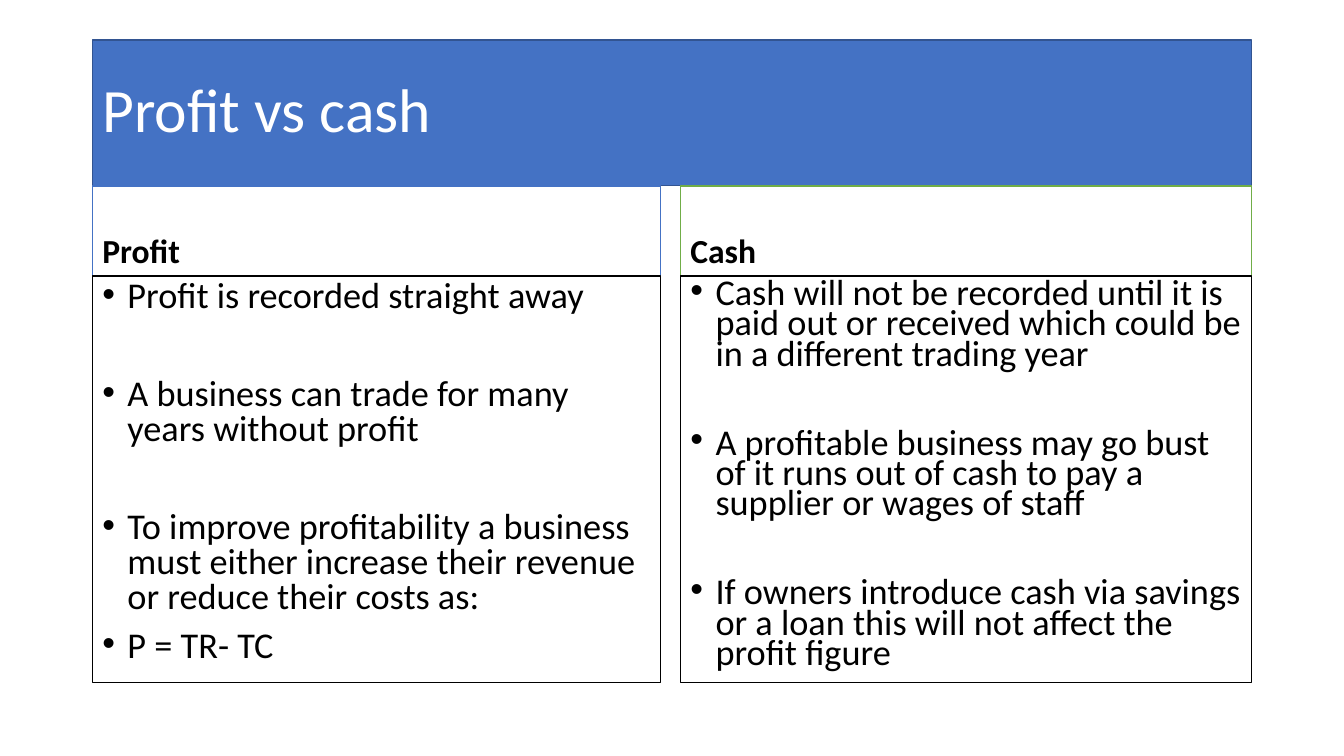
from dataclasses import dataclass

import pptx
import pptx.dml.color
import pptx.enum.shapes
import pptx.enum.text
import pptx.util
from lxml import etree

PX = 9525  # EMU per px, 96 px to the inch
FONT = "Calibri"
COLORS = {
    "blue": "4472C4",
    "navy": "325491",
    "green": "70AD47",
    "black": "000000",
    "white": "FFFFFF",
}
ANCHOR = pptx.enum.text.MSO_ANCHOR

# Rows shared by both columns: top and height in px
LEFT = 88
TITLE = (38, 139)
HEAD = (177, 86)
BODY = (263, 387)


@dataclass
class Column:
    left: int
    width: int
    edge: str
    head: str
    points: list[str]
    wide: set[int]  # points with a wide gap above
    gap: float
    lines: float


COLUMNS = [
    Column(LEFT, 541, "blue", "Profit", [
        "Profit is recorded straight away",
        "A business can trade for many years without profit",
        "To improve profitability a business must either increase their "
        "revenue or reduce their costs as:",
        "P = TR- TC",
    ], {1, 2}, 45, 0.8),
    Column(648, 544, "green", "Cash", [
        "Cash will not be recorded until it is paid out or received which "
        "could be in a different trading year",
        "A profitable business may go bust of it runs out of cash to pay a "
        "supplier or wages of staff",
        "If owners introduce cash via savings or a loan this will not affect "
        "the profit figure",
    ], {1, 2}, 41.5, 0.7),
]


def paint(name: str) -> pptx.dml.color.RGBColor:
    return pptx.dml.color.RGBColor.from_string(COLORS[name])


def add_box(slide, left: int, width: int, row: tuple[int, int],
            fill: str, edge: str, anchor):
    """Draw a bordered box and return its text frame."""
    top, height = row
    box = slide.shapes.add_shape(
        pptx.enum.shapes.MSO_SHAPE.RECTANGLE,
        left * PX, top * PX, width * PX, height * PX)
    box.shadow.inherit = False
    box.fill.solid()
    box.fill.fore_color.rgb = paint(fill)
    box.line.color.rgb = paint(edge)
    box.line.width = pptx.util.Pt(1)
    frame = box.text_frame
    frame.word_wrap = True
    frame.vertical_anchor = anchor
    return frame


def add_text(frame, text: str, *, size: float, color: str = "black",
             bold: bool = False, lines: float = 0.9, before: float = 10,
             bullet: bool = False) -> None:
    """Write one paragraph, filling the empty first one if there is one."""
    para = frame.paragraphs[0]
    if para.runs:
        para = frame.add_paragraph()
    para.alignment = pptx.enum.text.PP_ALIGN.LEFT
    para.line_spacing = lines
    para.space_before = pptx.util.Pt(before)
    run = para.add_run()
    run.text = text
    run.font.name = FONT
    run.font.size = pptx.util.Pt(size)
    run.font.bold = bold
    run.font.color.rgb = paint(color)
    if bullet:
        props = para._p.get_or_add_pPr()
        props.set("marL", str(24 * PX))
        props.set("indent", str(-24 * PX))
        space = pptx.oxml.ns.qn
        etree.SubElement(props, space("a:buFont")).set("typeface", "Arial")
        etree.SubElement(props, space("a:buChar")).set("char", "•")


def add_column(slide, col: Column) -> None:
    head = add_box(slide, col.left, col.width, HEAD,
                   "white", col.edge, ANCHOR.BOTTOM)
    add_text(head, col.head, size=24, bold=True)
    body = add_box(slide, col.left, col.width, BODY,
                   "white", "black", ANCHOR.TOP)
    for i, point in enumerate(col.points):
        add_text(body, point, size=25.9, lines=col.lines, bullet=True,
                 before=col.gap if i in col.wide else 10)


def main() -> None:
    deck = pptx.Presentation()
    deck.slide_width = 1280 * PX
    deck.slide_height = 720 * PX
    slide = deck.slides.add_slide(deck.slide_layouts[6])

    # Title band
    title = add_box(slide, LEFT, 1104, TITLE, "blue", "navy", ANCHOR.MIDDLE)
    add_text(title, "Profit vs cash", size=44, color="white", before=0)

    # Comparison columns
    for col in COLUMNS:
        add_column(slide, col)

    deck.save("out.pptx")


if __name__ == "__main__":
    main()
